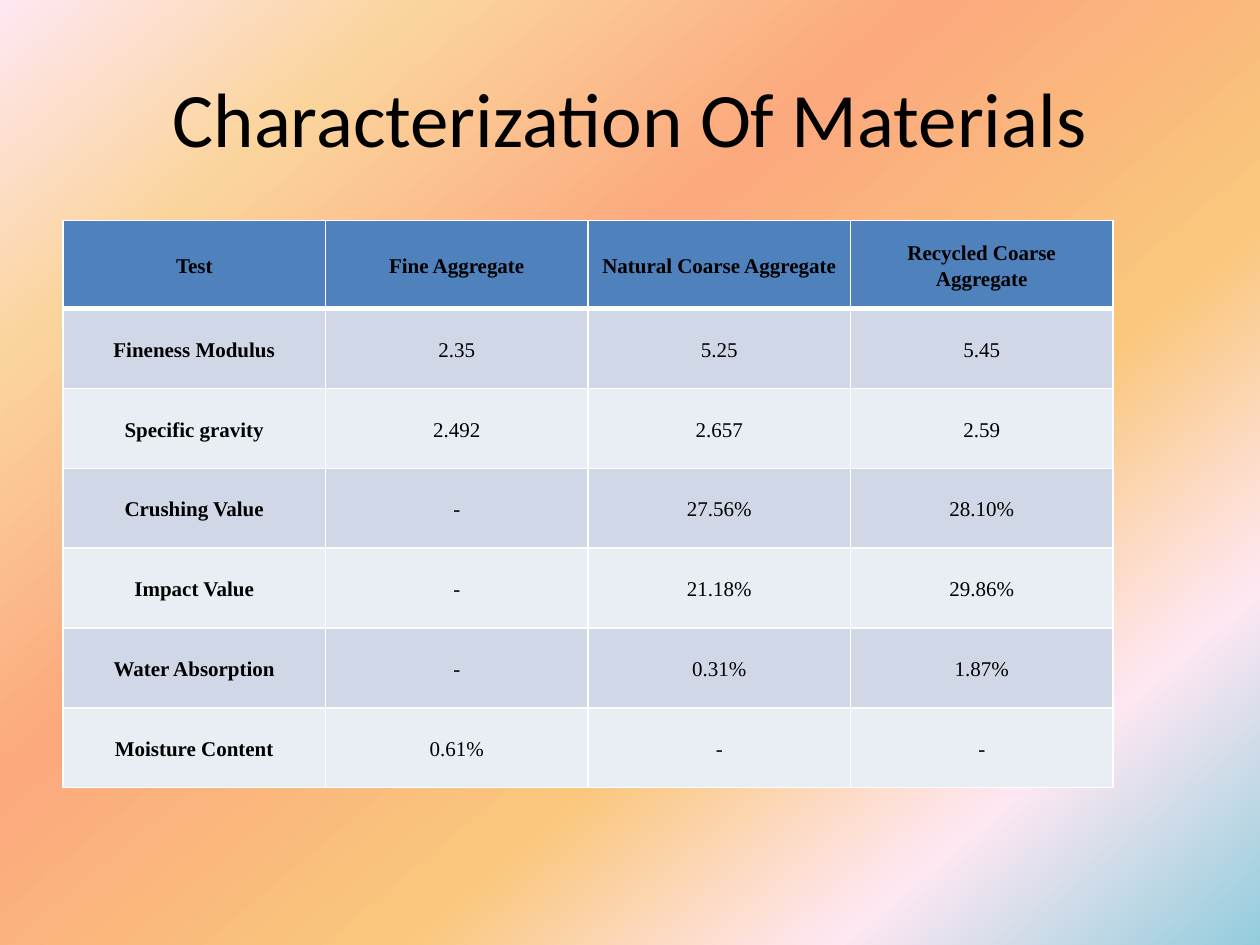
from copy import deepcopy

from lxml import etree
from pptx import Presentation
from pptx.dml.color import RGBColor
from pptx.enum.text import MSO_ANCHOR, PP_ALIGN
from pptx.oxml.ns import qn
from pptx.util import Cm, Pt

CENTER = PP_ALIGN.CENTER
MIDDLE = MSO_ANCHOR.MIDDLE

BLACK = RGBColor(0x00, 0x00, 0x00)
WHITE = RGBColor(0xFF, 0xFF, 0xFF)
HEADER_BLUE = RGBColor(0x4F, 0x81, 0xBD)
BAND_DARK = RGBColor(0xD0, 0xD8, 0xE8)
BAND_LIGHT = RGBColor(0xE9, 0xED, 0xF4)
SKY = RGBColor(0x93, 0xCD, 0xDD)
PINK = RGBColor(0xFE, 0xE7, 0xF2)
AMBER = RGBColor(0xFA, 0xC7, 0x7D)
CORAL = RGBColor(0xFB, 0xA9, 0x7D)
SAND = RGBColor(0xFB, 0xD4, 0x9C)

BACKGROUND_STOPS = [
    (0, SKY), (0.18, PINK), (0.36, AMBER), (0.61, CORAL), (0.82, SAND), (1, PINK),
]
BACKGROUND_ANGLE = 130  # counter-clockwise degrees

TITLE = "Characterization Of Materials"
TEST_RESULTS = [
    ("Test", "Fine Aggregate", "Natural Coarse Aggregate", "Recycled Coarse Aggregate"),
    ("Fineness Modulus", "2.35", "5.25", "5.45"),
    ("Specific gravity", "2.492", "2.657", "2.59"),
    ("Crushing Value", "-", "27.56%", "28.10%"),
    ("Impact Value", "-", "21.18%", "29.86%"),
    ("Water Absorption", "-", "0.31%", "1.87%"),
    ("Moisture Content", "0.61%", "-", "-"),
]
HEADER_HEIGHT = Cm(1.77)


def paint_background(slide):
    fill = slide.background.fill
    fill.gradient()
    fill.gradient_angle = BACKGROUND_ANGLE
    stop_list = slide.element.find(f".//{qn('a:gsLst')}")
    while len(stop_list) < len(BACKGROUND_STOPS):
        stop_list.append(deepcopy(stop_list[-1]))
    for stop, (position, color) in zip(fill.gradient_stops, BACKGROUND_STOPS):
        stop.position = position
        stop.color.rgb = color


def place_title(slide, left, top, width, height):
    title = slide.shapes.title
    title.left, title.top, title.width, title.height = left, top, width, height
    title.text_frame.text = TITLE
    title.text_frame.vertical_anchor = MIDDLE
    paragraph = title.text_frame.paragraphs[0]
    paragraph.alignment = CENTER
    paragraph.font.name = "Calibri"
    paragraph.font.size = Pt(44)
    paragraph.font.color.rgb = BLACK


def set_borders(cell, widths):
    """Draw white borders; widths maps the sides L, R, T and B, in that order."""
    properties = cell._tc.get_or_add_tcPr()
    for side, width in widths.items():
        line = etree.SubElement(properties, qn(f"a:ln{side}"), w=str(width))
        solid = etree.SubElement(line, qn("a:solidFill"))
        etree.SubElement(solid, qn("a:srgbClr"), val=str(WHITE))


def format_cell(cell, text, fill_color, bold):
    cell.fill.solid()
    cell.fill.fore_color.rgb = fill_color
    cell.vertical_anchor = MIDDLE
    cell.margin_left = cell.margin_right = Cm(0.19)
    cell.margin_top = cell.margin_bottom = 0
    cell.text = text
    paragraph = cell.text_frame.paragraphs[0]
    paragraph.alignment = CENTER
    paragraph.line_spacing = 1.15
    paragraph.font.name = "Times New Roman"
    paragraph.font.size = Pt(12)
    paragraph.font.bold = bold
    paragraph.font.color.rgb = BLACK


def place_results_table(slide, left, top, width, height):
    row_count, column_count = len(TEST_RESULTS), len(TEST_RESULTS[0])
    table = slide.shapes.add_table(
        row_count, column_count, left, top, width, height).table
    for row_index, values in enumerate(TEST_RESULTS):
        is_header = row_index == 0
        if is_header:
            table.rows[row_index].height = HEADER_HEIGHT
            fill_color = HEADER_BLUE
        else:
            table.rows[row_index].height = (height - HEADER_HEIGHT) // (row_count - 1)
            fill_color = BAND_DARK if row_index % 2 else BAND_LIGHT
        borders = {
            "L": Pt(1),
            "R": Pt(1),
            "T": Pt(3) if row_index == 1 else Pt(1),
            "B": Pt(3) if is_header else Pt(1),
        }
        for column_index, value in enumerate(values):
            cell = table.cell(row_index, column_index)
            set_borders(cell, borders)
            format_cell(cell, value, fill_color, is_header or column_index == 0)


def main():
    presentation = Presentation()
    presentation.slide_width, presentation.slide_height = Cm(25.4), Cm(19.05)
    title_only = presentation.slide_layouts.get_by_name("Title Only")
    slide = presentation.slides.add_slide(title_only)
    paint_background(slide)
    place_title(slide, Cm(1.27), Cm(0.76), Cm(22.86), Cm(3.18))
    place_results_table(slide, Cm(1.27), Cm(4.45), Cm(21.17), Cm(11.43))
    presentation.save("out.pptx")


if __name__ == "__main__":
    main()
